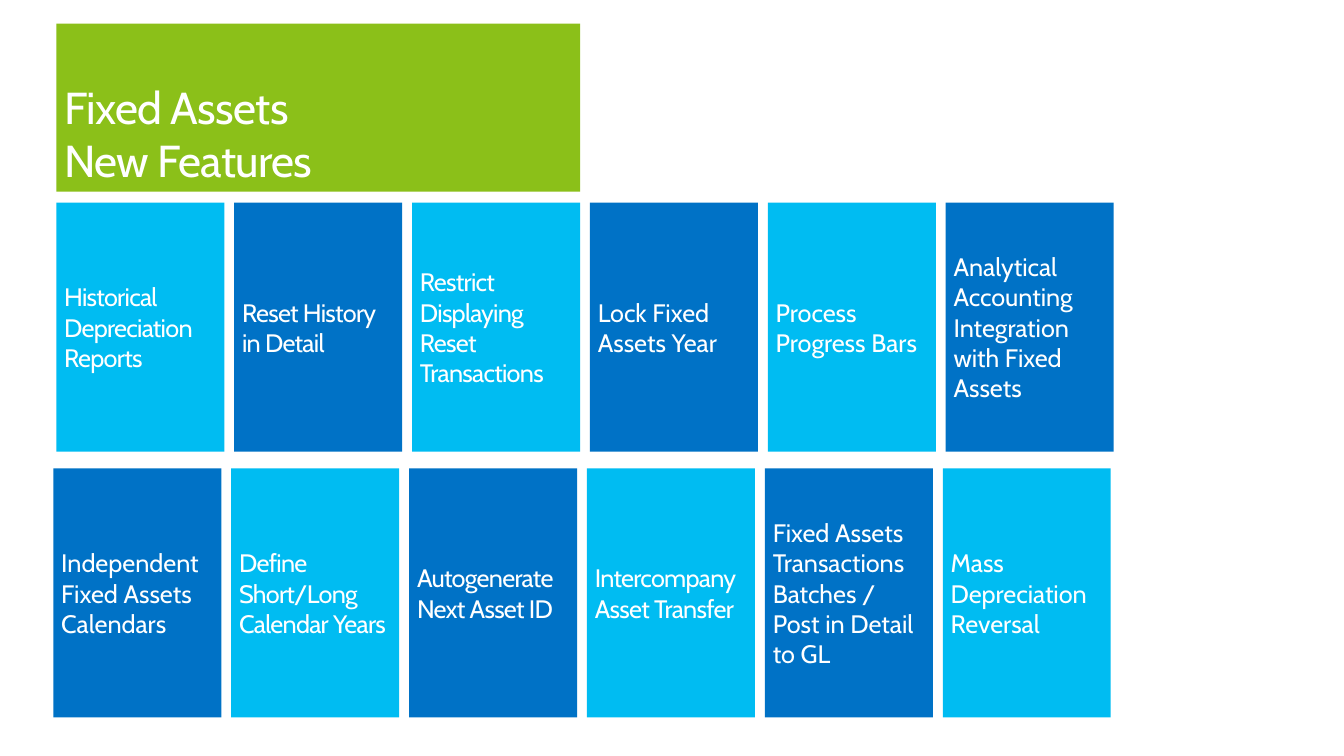
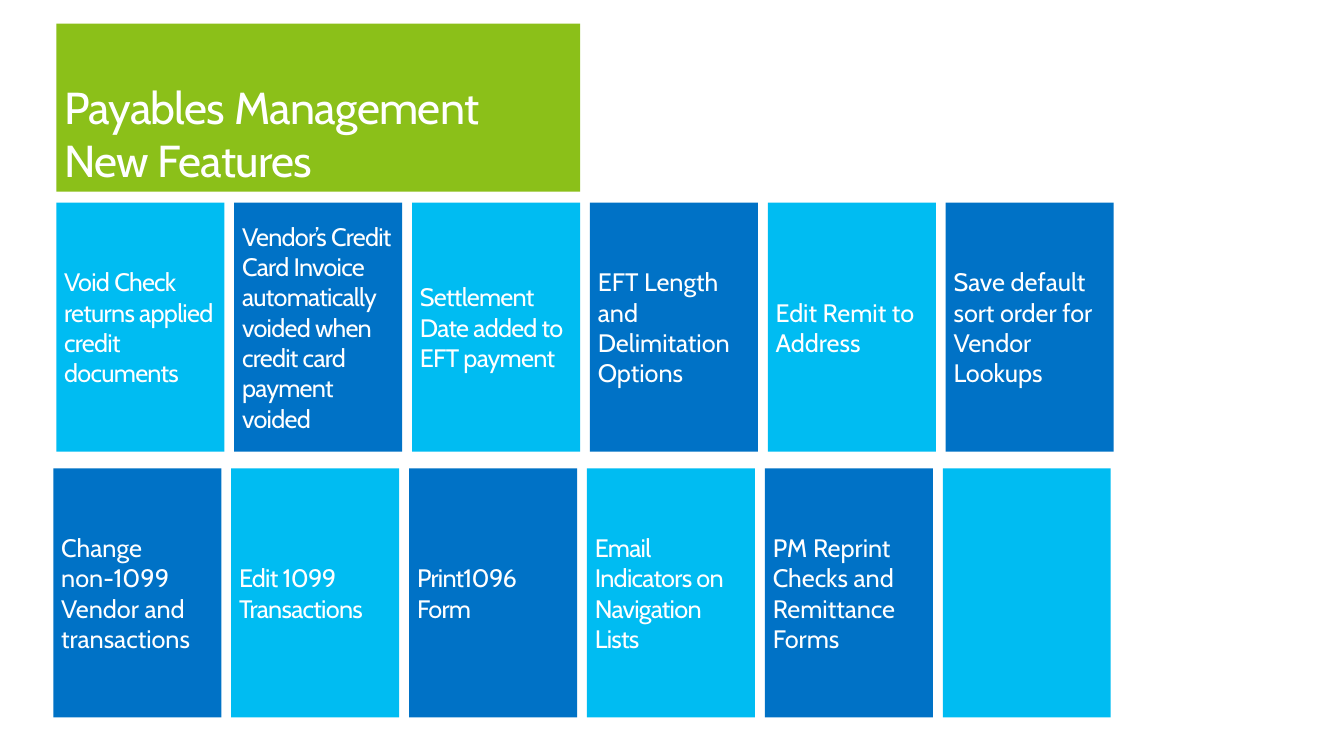
import pptx
import pptx.util
import pptx.dml.color
import pptx.enum.shapes
import pptx.enum.text

Inches = pptx.util.Inches
RGBColor = pptx.dml.color.RGBColor
Anchor = pptx.enum.text.MSO_ANCHOR

PAGES = [
    ("Fixed Assets\nNew Features", [
        ["Historical Depreciation Reports", "Reset History in Detail",
         "Restrict Displaying Reset Transactions", "Lock Fixed Assets Year",
         "Process Progress Bars",
         "Analytical Accounting Integration with Fixed Assets"],
        ["Independent Fixed Assets Calendars",
         "Define Short/Long Calendar Years", "Autogenerate Next Asset ID",
         "Intercompany Asset Transfer",
         "Fixed Assets Transactions Batches / Post in Detail to GL",
         "Mass Depreciation Reversal"],
    ]),
    ("Payables Management\nNew Features", [
        ["Void Check returns applied credit documents",
         "Vendor’s Credit Card Invoice automatically voided when credit card "
         "payment voided",
         "Settlement Date added to EFT payment",
         "EFT Length and Delimitation Options", "Edit Remit to Address",
         "Save default sort order for Vendor Lookups"],
        ["Change non-1099 Vendor and transactions", "Edit 1099 Transactions",
         "Print1096 Form", "Email Indicators on Navigation Lists",
         "PM Reprint Checks and Remittance Forms", ""],
    ]),
]

FONT = "Cabin"
WHITE = RGBColor(0xFF, 0xFF, 0xFF)
GREEN = RGBColor(0x8B, 0xC0, 0x19)
TILE_COLORS = [RGBColor(0x00, 0xBC, 0xF2), RGBColor(0x00, 0x72, 0xC6)]

PAGE_WIDTH, PAGE_HEIGHT = 13.6, 7.65
TITLE_PLACE = (0.57, 0.24, 5.3, 1.7)
TILE_WIDTH, TILE_HEIGHT = 1.7, 2.52
COLUMN_STEP = 1.8
ROW_LEFTS = [0.57, 0.54]
ROW_TOPS = [2.05, 4.74]
TIGHT_COLUMNS = [range(0, 3), range(1, 4)]


def write_text(box, text, size, anchor, tight):
    frame = box.text_frame
    frame.word_wrap = True
    frame.vertical_anchor = anchor
    frame.margin_left = frame.margin_right = Inches(0.08)
    frame.margin_top = frame.margin_bottom = Inches(0.05)
    para = frame.paragraphs[0]
    para.alignment = pptx.enum.text.PP_ALIGN.LEFT
    para.text = text
    for span in para.runs:
        span.font.name = FONT
        span.font.size = pptx.util.Pt(size)
        span.font.color.rgb = WHITE
        if tight:
            span.font._element.set("spc", "-50")


def add_block(page, place, color, text, size=18.4, anchor=Anchor.MIDDLE, tight=True):
    box = page.shapes.add_shape(
        pptx.enum.shapes.MSO_SHAPE.RECTANGLE, *map(Inches, place))
    box.shadow.inherit = False
    box.fill.solid()
    box.fill.fore_color.rgb = color
    box.line.fill.background()
    if text:
        write_text(box, text, size, anchor, tight)


def add_page(deck, title, rows):
    page = deck.slides.add_slide(deck.slide_layouts[6])
    add_block(page, TITLE_PLACE, GREEN, title, size=32.6, anchor=Anchor.BOTTOM)
    for row, features in enumerate(rows):
        for column, feature in enumerate(features):
            place = (ROW_LEFTS[row] + column * COLUMN_STEP, ROW_TOPS[row],
                     TILE_WIDTH, TILE_HEIGHT)
            add_block(page, place, TILE_COLORS[(row + column) % 2], feature,
                      tight=column in TIGHT_COLUMNS[row])


def main():
    deck = pptx.Presentation()
    deck.slide_width = Inches(PAGE_WIDTH)
    deck.slide_height = Inches(PAGE_HEIGHT)
    for title, rows in PAGES:
        add_page(deck, title, rows)
    deck.save("out.pptx")


if __name__ == "__main__":
    main()
